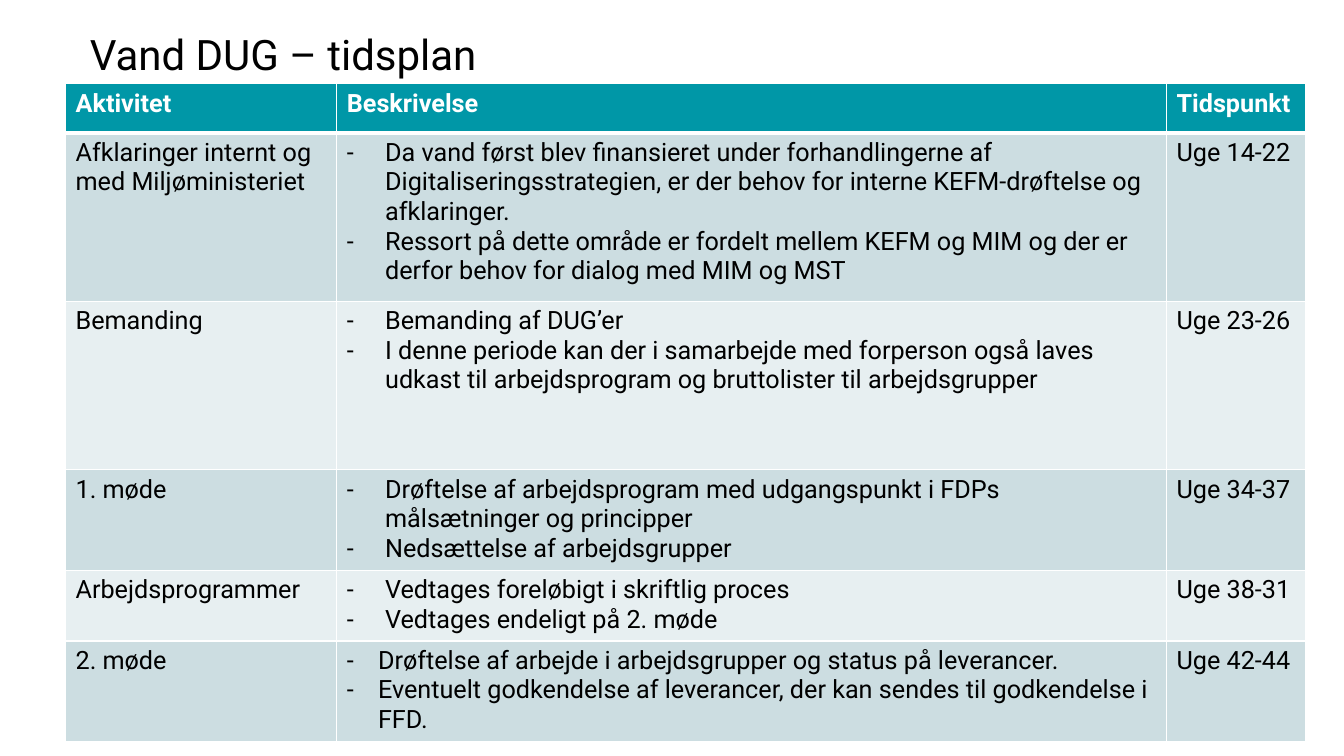
from lxml.etree import SubElement
from pptx import Presentation
from pptx.dml.color import RGBColor
from pptx.enum.text import MSO_ANCHOR, PP_ALIGN
from pptx.oxml.ns import qn
from pptx.util import Inches, Pt

TITLE = "Vand DUG – tidsplan"
HEADINGS = ("Aktivitet", "Beskrivelse", "Tidspunkt")
# activity, description points, weeks, row height, hanging indent
ACTIVITIES = [
    ("Afklaringer internt og med Miljøministeriet",
     ["Da vand først blev finansieret under forhandlingerne af Digitaliseringsstrategien, "
      "er der behov for interne KEFM-drøftelse og afklaringer.",
      "Ressort på dette område er fordelt mellem KEFM og MIM og der er derfor behov "
      "for dialog med MIM og MST"],
     "Uge 14-22", 1.67, 0.38),
    ("Bemanding",
     ["Bemanding af DUG’er",
      "I denne periode kan der i samarbejde med forperson også laves udkast til "
      "arbejdsprogram og bruttolister til arbejdsgrupper"],
     "Uge 23-26", 1.67, 0.38),
    ("1. møde",
     ["Drøftelse af arbejdsprogram med udgangspunkt i FDPs målsætninger og principper",
      "Nedsættelse af arbejdsgrupper"],
     "Uge 34-37", 1.0, 0.38),
    ("Arbejdsprogrammer",
     ["Vedtages foreløbigt i skriftlig proces",
      "Vedtages endeligt på 2. møde"],
     "Uge 38-31", 0.7, 0.38),
    ("2. møde",
     ["Drøftelse af arbejde i arbejdsgrupper og status på leverancer.",
      "Eventuelt godkendelse af leverancer, der kan sendes til godkendelse i FFD."],
     "Uge 42-44", 1.0, 0.31),
]
COLORS = {"header": "0097A7", "odd": "CCDDE1", "even": "E7EFF1",
          "text": "000000", "white": "FFFFFF"}
COLUMN_WIDTHS = (2.69, 8.23, 1.38)
HEADER_HEIGHT = 0.49
FONT_NAME = "Roboto"


def format_font(paragraph, size, color, bold=False):
    font = paragraph.font
    for name, value in {"name": FONT_NAME, "size": Pt(size), "bold": bold}.items():
        setattr(font, name, value)
    font.color.rgb = RGBColor.from_string(COLORS[color])


def add_dash(paragraph, indent):
    properties = paragraph._p.get_or_add_pPr()
    properties.set("marL", str(Inches(indent)))
    properties.set("indent", str(-Inches(indent)))
    SubElement(properties, qn("a:buFont"), typeface=FONT_NAME)
    SubElement(properties, qn("a:buChar"), char="-")


def set_borders(cell, widths):
    """Draw white borders; widths maps each side tag to points."""
    properties = cell._tc.get_or_add_tcPr()
    for index, (side, width) in enumerate(widths.items()):
        line = properties.makeelement(qn(f"a:{side}"), {"w": str(Pt(width))})
        fill = SubElement(line, qn("a:solidFill"))
        SubElement(fill, qn("a:srgbClr"), val=COLORS["white"])
        properties.insert(index, line)


def fill_cell(cell, lines, fill, color, bold=False, indent=None, top=1, bottom=1):
    cell.fill.solid()
    cell.fill.fore_color.rgb = RGBColor.from_string(COLORS[fill])
    set_borders(cell, {"lnL": 1, "lnR": 1, "lnT": top, "lnB": bottom})
    cell.text = "\n".join(lines)
    for paragraph in cell.text_frame.paragraphs:
        if indent:
            add_dash(paragraph, indent)
        format_font(paragraph, 18, color, bold)


def add_title(slide):
    title = slide.shapes.title
    places = {"left": 0.79, "top": 0.23, "width": 5.82, "height": 0.61}
    for name, value in places.items():
        setattr(title, name, Inches(value))
    frame = title.text_frame
    frame.text = TITLE
    frame.word_wrap = True
    frame.vertical_anchor = MSO_ANCHOR.TOP
    paragraph = frame.paragraphs[0]
    paragraph.alignment = PP_ALIGN.LEFT
    paragraph.line_spacing = 1.0
    format_font(paragraph, 30, "text")


def add_schedule(slide):
    heights = [HEADER_HEIGHT] + [activity[3] for activity in ACTIVITIES]
    table = slide.shapes.add_table(
        len(heights), len(HEADINGS), Inches(0.65), Inches(0.83),
        Inches(sum(COLUMN_WIDTHS)), Inches(sum(heights))).table
    for column, width in zip(table.columns, COLUMN_WIDTHS):
        column.width = Inches(width)
    for row, height in zip(table.rows, heights):
        row.height = Inches(height)
    for column, heading in enumerate(HEADINGS):
        fill_cell(table.cell(0, column), [heading], "header", "white", bold=True, bottom=3)
    for row, (activity, points, weeks, _, indent) in enumerate(ACTIVITIES, 1):
        fill = "odd" if row % 2 else "even"
        top = 3 if row == 1 else 1
        contents = (([activity], None), (points, indent), ([weeks], None))
        for column, (lines, hanging) in enumerate(contents):
            fill_cell(table.cell(row, column), lines, fill, "text", indent=hanging, top=top)


def main():
    presentation = Presentation()
    presentation.slide_width = Inches(13.33)
    presentation.slide_height = Inches(7.5)
    slide = presentation.slides.add_slide(presentation.slide_layouts[5])
    add_title(slide)
    add_schedule(slide)
    presentation.save("out.pptx")


if __name__ == "__main__":
    main()
